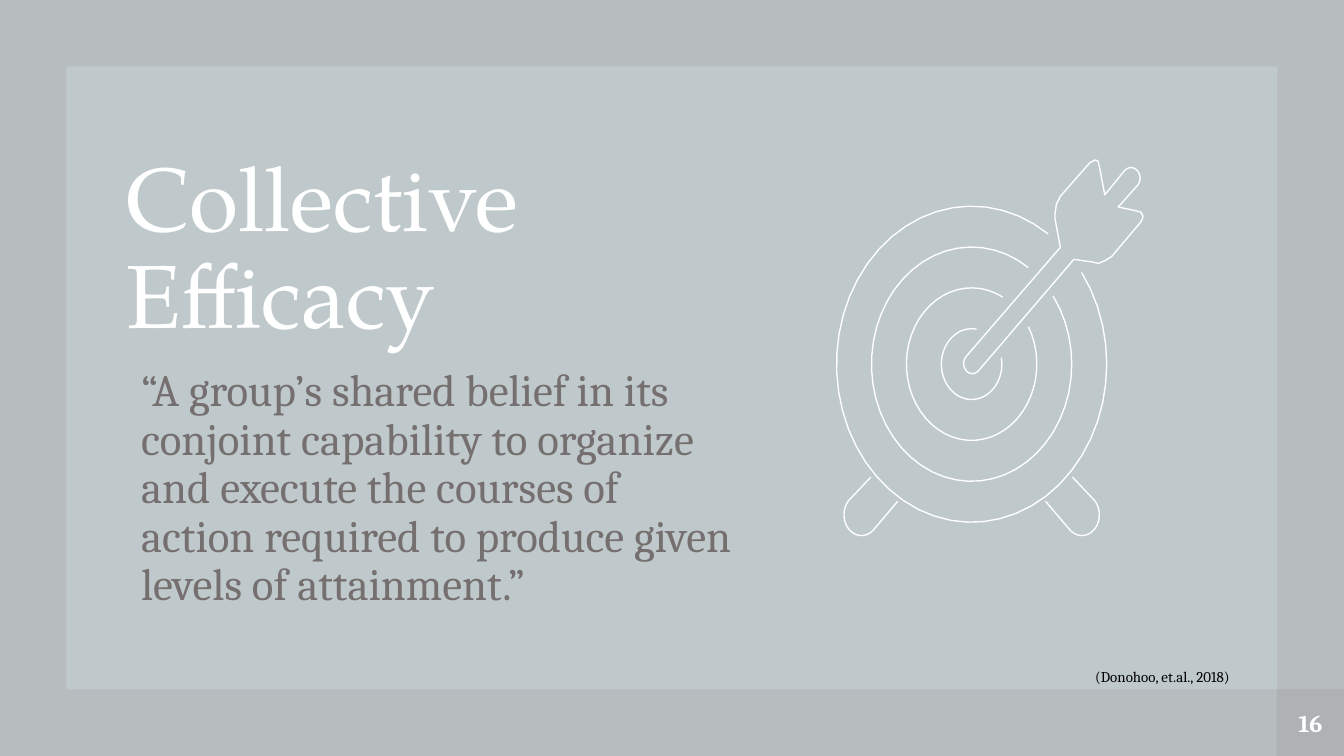
import dataclasses
import math

import pptx
import pptx.dml.color
import pptx.enum.shapes
import pptx.enum.text
import pptx.oxml.ns
import pptx.util
from lxml import etree

SHAPES = pptx.enum.shapes.MSO_SHAPE
ANCHOR = pptx.enum.text.MSO_ANCHOR
ALIGN = pptx.enum.text.PP_ALIGN
COLUMNS = 100


@dataclasses.dataclass(frozen=True)
class Theme:
    background: str = "BFC8CB"
    shade: str = "3B1106"
    shade_percent: int = 6
    light: str = "FFFFFF"
    muted: str = "756F6F"
    dark: str = "000000"
    title_font: str = "TeX Gyre Pagella"
    body_font: str = "Cambria"
    title_size: int = 48
    quote_size: int = 24
    number_size: int = 13
    citation_size: int = 8
    stroke: float = 0.75


def rgb(value):
    return pptx.dml.color.RGBColor.from_string(value)


def write_text(shape, text, *, font, size, color, bold=False, align=ALIGN.LEFT,
               anchor=ANCHOR.TOP, spacing=1.0, indent=0, insets=(0, 0)):
    frame = shape.text_frame
    frame.word_wrap = True
    frame.vertical_anchor = anchor
    frame.margin_left = frame.margin_right = insets[0]
    frame.margin_top = frame.margin_bottom = insets[1]
    paragraph = frame.paragraphs[0]
    paragraph.alignment = align
    paragraph.line_spacing = spacing
    if indent:
        properties = paragraph._p.get_or_add_pPr()
        properties.set("marL", str(indent))
        properties.set("indent", "0")
    run = paragraph.add_run()
    run.text = text
    run.font.name = font
    run.font.size = pptx.util.Pt(size)
    run.font.bold = bold
    run.font.color.rgb = rgb(color)


def arc(center, radii, start, end, steps=48):
    angles = [math.radians(start + (end - start) * i / steps) for i in range(steps + 1)]
    return [(center[0] + radii[0] * math.cos(a), center[1] + radii[1] * math.sin(a))
            for a in angles]


class SlideBuilder:
    def __init__(self, presentation, theme):
        self.theme = theme
        self.unit = presentation.slide_width / COLUMNS
        self.slide = presentation.slides.add_slide(presentation.slide_layouts[6])
        fill = self.slide.background.fill
        fill.solid()
        fill.fore_color.rgb = rgb(theme.background)

    def length(self, cells):
        return round(cells * self.unit)

    def shade(self, kind, *box):
        shape = self.slide.shapes.add_shape(kind, *map(self.length, box))
        shape.shadow.inherit = False
        shape.line.fill.background()
        shape.fill.solid()
        shape.fill.fore_color.rgb = rgb(self.theme.shade)
        color = shape._element.spPr.find(".//" + pptx.oxml.ns.qn("a:srgbClr"))
        alpha = etree.SubElement(color, pptx.oxml.ns.qn("a:alpha"))
        alpha.set("val", str(self.theme.shade_percent * 1000))
        return shape

    def text(self, box, text, **style):
        shape = self.slide.shapes.add_textbox(*map(self.length, box))
        write_text(shape, text, **style)

    def outline(self, points, close=False):
        start, *rest = [(self.length(x), self.length(y)) for x, y in points]
        builder = self.slide.shapes.build_freeform(*start, scale=1.0)
        builder.add_line_segments(rest, close=close)
        shape = builder.convert_to_shape()
        shape.shadow.inherit = False
        shape.fill.background()
        shape.line.color.rgb = rgb(self.theme.light)
        shape.line.width = pptx.util.Pt(self.theme.stroke)

    def target(self, center):
        aspect = 1.17
        for radius, half_gap in ((10.05, 10), (7.45, 10), (4.85, 16), (2.25, 35)):
            self.outline(arc(center, (radius, radius * aspect),
                             -45.5 - half_gap, half_gap - 405.5))
        leg = [(64.8, 35.5), *arc((64.1, 38.3), (1.3, 1.55), 222, 43, 20), (66.8, 37.3)]
        self.outline(leg)
        self.outline([(2 * center[0] - x, y) for x, y in leg])

    def arrow(self):
        upper_feather = [(84.6, 15.7), (83.2, 15.4)]
        nock = arc((84.15, 13.25), (0.68, 0.78), 45, -135, 12)
        lower_feather = [(82.2, 14.5), (81.8, 12.4), (81.7, 12), (81.5, 11.9), (81.1, 12.1),
                         (78.9, 14.6), (78.6, 15.2), (78.5, 15.9), (78.5, 16.3), (78.9, 18.4)]
        tip = arc((72.35, 27.05), (0.65, 0.75), 225, 45, 12)
        far_feather = [(79.9, 19.3), (81.3, 19.5), (81.7, 19.6), (82.2, 19.4), (82.7, 19.1),
                       (84.9, 16.5), (85.05, 16.1), (84.9, 15.8)]
        self.outline(upper_feather + nock + lower_feather + tip + far_feather, close=True)


def main():
    presentation = pptx.Presentation()
    presentation.slide_width = pptx.util.Inches(10)
    presentation.slide_height = pptx.util.Inches(5.625)
    theme = Theme()
    page = SlideBuilder(presentation, theme)

    border = page.shade(SHAPES.FRAME, 0, 0, COLUMNS, 56.25)
    border.adjustments[0] = 0.088
    page.text((9.4, 18.3, 39.9, 7.6), "Collective Efficacy", font=theme.title_font,
              size=theme.title_size, color=theme.light, anchor=ANCHOR.BOTTOM, spacing=0.9)
    page.text((9.4, 27.4, 45.6, 10.5),
              "“A group’s shared belief in its conjoint capability to organize and execute "
              "the courses of action required to produce given levels of attainment.”",
              font=theme.body_font, size=theme.quote_size, color=theme.muted,
              spacing=0.9, indent=page.length(1.1))
    page_number = page.shade(SHAPES.RECTANGLE, 95, 51.25, 5, 5)
    write_text(page_number, "16", font=theme.body_font, size=theme.number_size,
               color=theme.light, bold=True, align=ALIGN.CENTER, anchor=ANCHOR.MIDDLE)
    page.target((72.3, 27.1))
    page.arrow()
    page.text((80.5, 49.2, 14.5, 2.4), "(Donohoo, et.al., 2018)", font=theme.body_font,
              size=theme.citation_size, color=theme.dark,
              insets=(page.length(1), page.length(0.5)))
    presentation.save("out.pptx")


if __name__ == "__main__":
    main()
